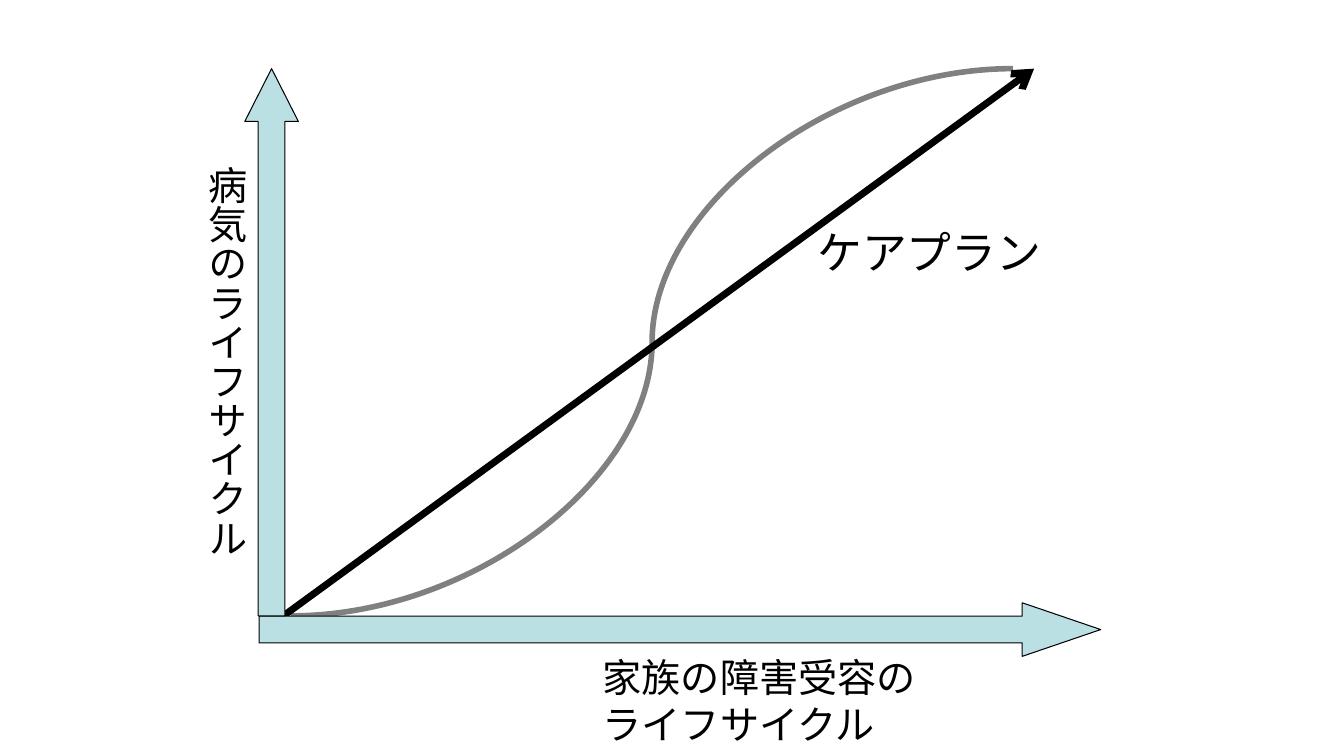
from lxml.etree import SubElement
from pptx import Presentation
from pptx.dml.color import RGBColor
from pptx.enum.shapes import MSO_CONNECTOR, MSO_SHAPE
from pptx.enum.text import MSO_AUTO_SIZE
from pptx.oxml.ns import qn
from pptx.util import Cm, Pt

COLORS = {"axis": "BBE0E3", "curve": "808080", "ink": "000000"}
FONT = "Arial"
THICK = 1.35  # width of an axis arrow in cm


def rgb(name):
    return RGBColor.from_string(COLORS[name])


def add_axis(s, kind, x, y, w, h, head):
    sp = s.shapes.add_shape(kind, Cm(x), Cm(y), Cm(w), Cm(h))
    sp.adjustments[0] = 0.5
    sp.adjustments[1] = head
    sp.shadow.inherit = False
    sp.fill.solid()
    sp.fill.fore_color.rgb = rgb("axis")
    sp.line.color.rgb = rgb("ink")
    sp.line.width = Pt(0.75)


def add_line(s, kind, x1, y1, x2, y2, color, width, arrow=False):
    c = s.shapes.add_connector(kind, Cm(x1), Cm(y1), Cm(x2), Cm(y2))
    c.line.color.rgb = rgb(color)
    c.line.width = Pt(width)
    if arrow:
        SubElement(c.line._get_or_add_ln(), qn("a:tailEnd"), type="arrow")
    SubElement(c._element.spPr, qn("a:effectLst"))


def add_label(s, lines, x, y, w, h, size, vertical=False):
    tf = s.shapes.add_textbox(Cm(x), Cm(y), Cm(w), Cm(h)).text_frame
    tf.word_wrap = True
    tf.auto_size = MSO_AUTO_SIZE.SHAPE_TO_FIT_TEXT
    if vertical:
        tf._txBody.bodyPr.set("vert", "eaVert")
    for i, line in enumerate(lines):
        p = tf.add_paragraph() if i else tf.paragraphs[0]
        r = p.add_run()
        r.text = line
        r.font.name = FONT
        r.font.size = Pt(size)
        r.font.color.rgb = rgb("ink")


def add_graph(s, x, y, w, h):
    base = y + h - 1.02  # foot of the vertical axis

    # Life-cycle curve and care plan line, behind the axes
    add_line(s, MSO_CONNECTOR.CURVE, x + 19.36, y, x + 1.17, base, "curve", 4)
    add_line(s, MSO_CONNECTOR.STRAIGHT, x + 0.97, base, x + 19.89, y,
             "ink", 5, arrow=True)

    # Axes
    add_axis(s, MSO_SHAPE.RIGHT_ARROW, x + 0.36, y + h - THICK,
             w - 0.36, THICK, 1.465)
    add_axis(s, MSO_SHAPE.UP_ARROW, x, y, THICK, base - y, 0.986)

    # Labels
    add_label(s, ["家族の障害受容の", "ライフサイクル"],
              x + 8.77, y + h - 0.21, 9.6, 2.64, 28)
    add_label(s, ["病気のライフサイクル"],
              x - 1.45, y + 2.21, 1.7, 11.58, 28, vertical=True)
    add_label(s, ["ケアプラン"], x + 14.18, y + 3.81, 6.2, 1.6, 32)


def main():
    prs = Presentation()
    prs.slide_width, prs.slide_height = Cm(33.87), Cm(19.05)
    s = prs.slides.add_slide(prs.slide_layouts[6])
    add_graph(s, 6.17, 1.73, 21.57, 14.81)
    prs.save("out.pptx")


if __name__ == "__main__":
    main()
